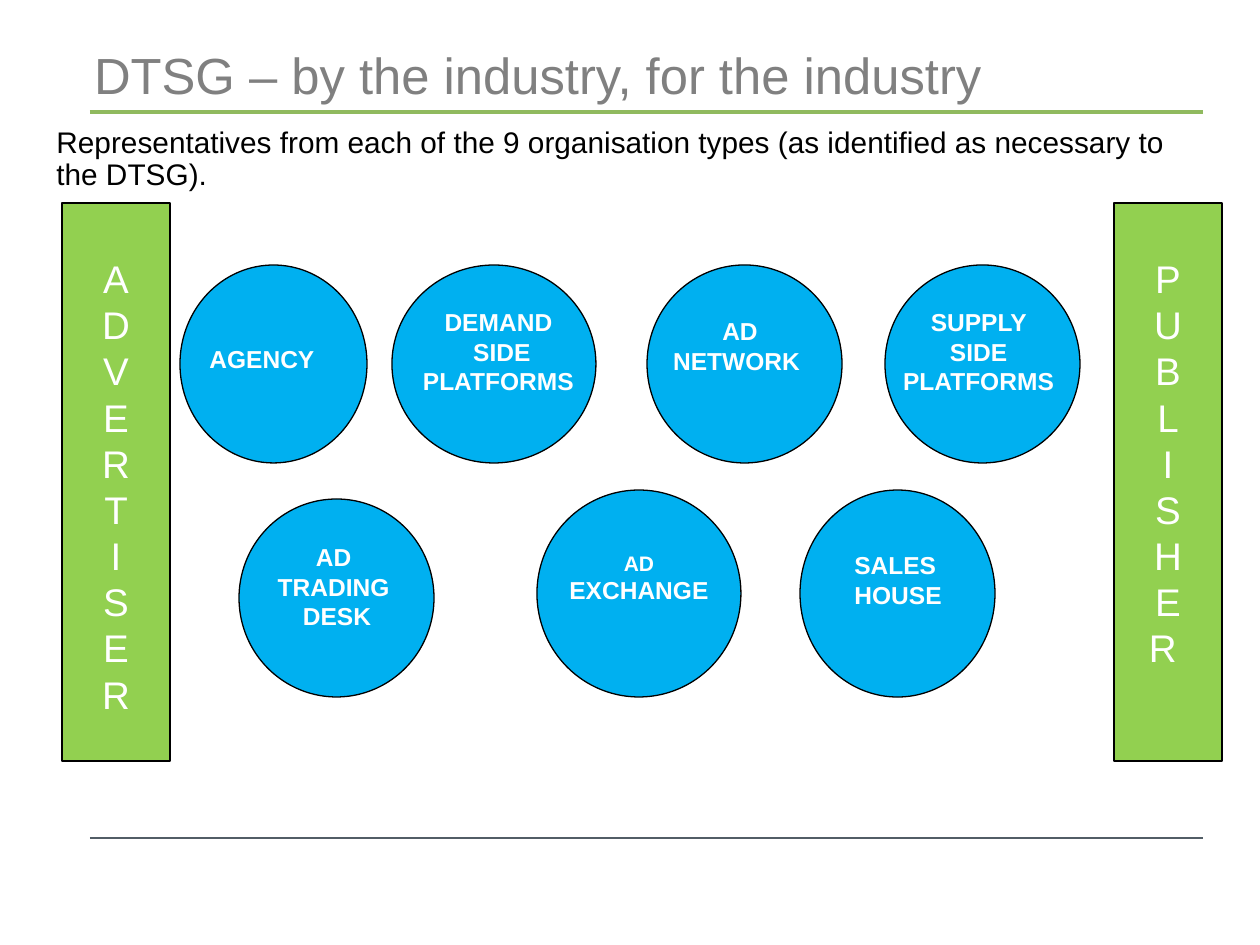
import pptx
import pptx.util
import pptx.dml.color
import pptx.enum.shapes
import pptx.enum.text
import lxml.etree

SCALE = 914400 / 126
HUES = {
    "title": "808080", "rule": "90BA5F", "foot": "525D66", "bar": "92D050",
    "disc": "00B0F0", "edge": "000000", "text": "000000", "light": "FFFFFF",
}
SHAPES = pptx.enum.shapes.MSO_SHAPE
ALIGN = pptx.enum.text.PP_ALIGN
ANCHOR = pptx.enum.text.MSO_ANCHOR


def px(num):
    """Turn px into EMU."""
    return pptx.util.Emu(round(num * SCALE))


def hue(name):
    """Return the named colour."""
    return pptx.dml.color.RGBColor.from_string(HUES[name])


def write(frame, lines, size, tone, align=ALIGN.LEFT, bold=False):
    """Fill a frame with lines, each a string or a tuple of (text, size) runs."""
    frame.word_wrap = True
    for row, line in enumerate(lines):
        para = frame.paragraphs[0] if row == 0 else frame.add_paragraph()
        para.alignment = align
        para.font.name = "Arial"
        para.font.size = pptx.util.Pt(size)
        para.font.bold = bold
        para.font.color.rgb = hue(tone)
        parts = [(line, size)] if isinstance(line, str) else line
        for text, points in parts:
            run = para.add_run()
            run.text = text
            if points != size:
                run.font.size = pptx.util.Pt(points)


def add_text(slide, box, lines, size, tone, align=ALIGN.LEFT, bold=False):
    """Add a text box and return its frame."""
    frame = slide.shapes.add_textbox(*map(px, box)).text_frame
    write(frame, lines, size, tone, align, bold)
    return frame


def add_form(slide, kind, box, fill):
    """Add a filled shape with a thin dark edge."""
    form = slide.shapes.add_shape(kind, *map(px, box))
    form.shadow.inherit = False
    form.fill.solid()
    form.fill.fore_color.rgb = hue(fill)
    form.line.color.rgb = hue("edge")
    form.line.width = pptx.util.Pt(0.75)
    return form


def add_rule(slide, box, tone, width):
    """Draw a level line along the top of the box."""
    left, top, wide, _ = box
    rule = slide.shapes.add_connector(
        pptx.enum.shapes.MSO_CONNECTOR.STRAIGHT,
        px(left), px(top), px(left + wide), px(top))
    rule.line.color.rgb = hue(tone)
    rule.line.width = pptx.util.Pt(width)
    lxml.etree.SubElement(rule._element.spPr, pptx.oxml.ns.qn("a:effectLst"))


def add_head(slide, box, text):
    """Place the title and the green rule beneath it."""
    left, top, wide, high = box
    title = slide.shapes.title
    title.left, title.top = px(left + 4), px(top)
    title.width, title.height = px(wide - 4), px(high)
    frame = title.text_frame
    frame.margin_left = frame.margin_right = 0
    frame.margin_top = frame.margin_bottom = 0
    frame.vertical_anchor = ANCHOR.BOTTOM
    frame.auto_size = pptx.enum.text.MSO_AUTO_SIZE.NONE
    write(frame, [text], 29, "title")
    add_rule(slide, (left, top + high + 7, wide, 0), "rule", 2)


def add_bar(slide, box, lines):
    """Place a tall bar with one letter a line."""
    frame = add_form(slide, SHAPES.RECTANGLE, box, "bar").text_frame
    frame.vertical_anchor = ANCHOR.TOP
    frame.margin_top = px(52)
    write(frame, lines, 22, "light", ALIGN.CENTER)


def add_disc(slide, box, label, lines, align=ALIGN.CENTER):
    """Place a disc and its label, set off from the disc's corner."""
    left, top, _, _ = box
    add_form(slide, SHAPES.OVAL, box, "disc")
    right, down, wide, high = label
    add_text(slide, (left + right, top + down, wide, high), lines, 14,
             "light", align, True)


def add_discs(slide, box):
    """Place both rows of discs within the box."""
    left, top, _, _ = box
    discs = [
        (0, 0, 187, 198, (17, 73, 161, 42), ["AGENCY"], ALIGN.LEFT),
        (212, 0, 204, 198, (-8, 36, 229, 101),
         ["DEMAND", " SIDE PLATFORMS"], ALIGN.CENTER),
        (467, 0, 195, 198, (8, 45, 170, 71), ["AD NETWORK "], ALIGN.CENTER),
        (705, 0, 195, 198, (-26, 36, 246, 101),
         ["SUPPLY ", "SIDE ", "PLATFORMS "], ALIGN.CENTER),
        (59, 234, 195, 198, (-25, 37, 246, 101),
         ["AD ", "TRADING ", "DESK"], ALIGN.CENTER),
        (357, 225, 204, 207, (9, 54, 186, 67),
         [(("AD ", 12), ("EXCHANGE", 14))], ALIGN.CENTER),
        (620, 225, 195, 207, (42, 54, 127, 71),
         ["SALES", "HOUSE"], ALIGN.LEFT),
    ]
    for right, down, wide, high, label, lines, align in discs:
        add_disc(slide, (left + right, top + down, wide, high), label, lines, align)


def main():
    """Build the slide and save it."""
    deck = pptx.Presentation()
    deck.slide_width, deck.slide_height = px(1260), px(945)
    slide = deck.slides.add_slide(deck.slide_layouts[5])
    add_rule(slide, (90, 838, 1113, 0), "foot", 1)
    add_head(slide, (90, 38, 1113, 67), "DTSG – by the industry, for the industry")
    add_bar(slide, (62, 203, 108, 558), list("ADVERTISER"))
    add_bar(slide, (1114, 203, 108, 558), [*"PUBLISHE", "R "])
    add_discs(slide, (180, 265, 900, 432))
    intro = add_text(
        slide, (44, 122, 1179, 77),
        ["Representatives from each of the 9 organisation types "
         "(as identified as necessary to the DTSG)."], 17, "text")
    intro.paragraphs[0].line_spacing = 0.9
    deck.save("out.pptx")


if __name__ == "__main__":
    main()
